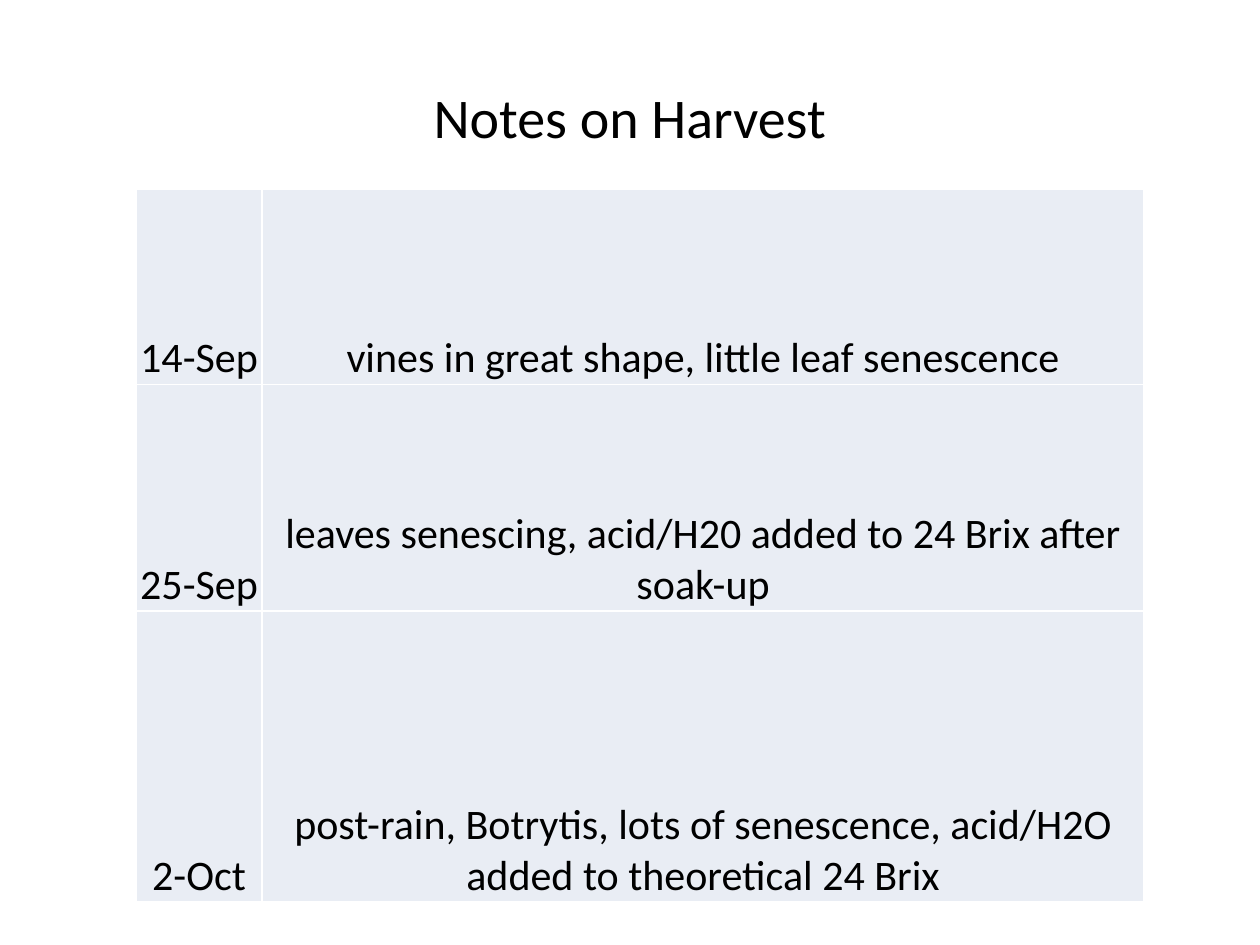
from lxml import etree
from pptx import Presentation
from pptx.dml.color import RGBColor
from pptx.enum.text import MSO_ANCHOR, PP_ALIGN
from pptx.oxml.ns import qn
from pptx.util import Inches, Pt

CENTER = PP_ALIGN.CENTER
MIDDLE = MSO_ANCHOR.MIDDLE
BOTTOM = MSO_ANCHOR.BOTTOM
BLACK = RGBColor(0x00, 0x00, 0x00)
WHITE = RGBColor(0xFF, 0xFF, 0xFF)
PALE_BLUE = RGBColor(0xE9, 0xED, 0xF4)

BLANK_LAYOUT = 6
CELL_FORMAT = {
    "margin_left": Inches(0.01),
    "margin_right": Inches(0.01),
    "margin_top": Inches(0.01),
    "margin_bottom": 0,
    "vertical_anchor": BOTTOM,
}
COLUMN_WIDTHS = [1, 7]
ROW_HEIGHTS = [1.55, 1.8, 2.31]
HARVEST_NOTES = [
    ("14-Sep", "vines in great shape, little leaf senescence"),
    ("25-Sep", "leaves senescing, acid/H20 added to 24 Brix after soak-up"),
    ("2-Oct", "post-rain, Botrytis, lots of senescence, acid/H2O added to theoretical 24 Brix"),
]


def apply_format(target, values):
    for name, value in values.items():
        setattr(target, name, value)


class SlideBuilder:
    def __init__(self, slide, font_name):
        self.slide = slide
        self.font_name = font_name

    def add_text(self, frame, text, size):
        para = frame.paragraphs[0]
        para.alignment = CENTER
        span = para.add_run()
        span.text = text
        apply_format(span.font, {"name": self.font_name, "size": Pt(size)})
        span.font.color.rgb = BLACK

    def title(self, text, left, top, width, height):
        box = self.slide.shapes.add_textbox(
            Inches(left), Inches(top), Inches(width), Inches(height)
        )
        apply_format(box.text_frame, {"word_wrap": True, "vertical_anchor": MIDDLE})
        self.add_text(box.text_frame, text, 32)

    def borders(self, cell):
        properties = cell._tc.get_or_add_tcPr()
        for position, side in enumerate(("lnL", "lnR", "lnT", "lnB")):
            line = etree.Element(qn(f"a:{side}"), w=str(Pt(1)))
            fill = etree.SubElement(line, qn("a:solidFill"))
            etree.SubElement(fill, qn("a:srgbClr"), val=str(WHITE))
            properties.insert(position, line)

    def table(self, rows, left, top, widths, heights):
        frame = self.slide.shapes.add_table(
            len(rows), len(widths), Inches(left), Inches(top),
            Inches(sum(widths)), Inches(sum(heights)),
        )
        table = frame.table
        apply_format(table, {"first_row": False, "horz_banding": False})
        for column, width in zip(table.columns, widths):
            column.width = Inches(width)
        for row, height, texts in zip(table.rows, heights, rows):
            row.height = Inches(height)
            for cell, text in zip(row.cells, texts):
                apply_format(cell, CELL_FORMAT)
                cell.fill.solid()
                cell.fill.fore_color.rgb = PALE_BLUE
                self.borders(cell)
                self.add_text(cell.text_frame, text, 24)


def main():
    deck = Presentation()
    apply_format(deck, {"slide_width": Inches(10), "slide_height": Inches(7.5)})
    slide = deck.slides.add_slide(deck.slide_layouts[BLANK_LAYOUT])
    builder = SlideBuilder(slide, "Calibri")
    builder.title("Notes on Harvest", 0.5, 0.3, 9, 1.25)
    builder.table(HARVEST_NOTES, 1.08, 1.5, COLUMN_WIDTHS, ROW_HEIGHTS)
    deck.save("out.pptx")


if __name__ == "__main__":
    main()
